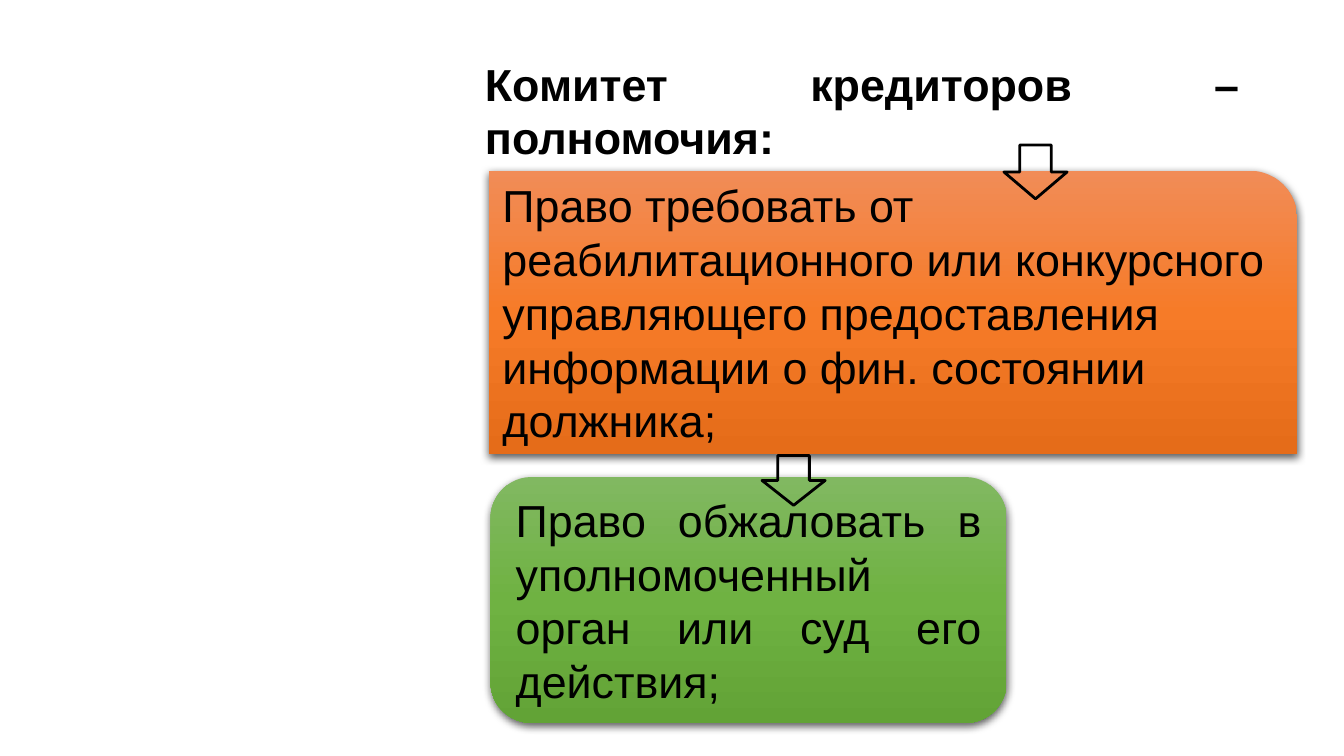
from copy import deepcopy
from dataclasses import dataclass

import lxml.etree
import pptx
import pptx.dml.color
import pptx.enum.shapes
import pptx.enum.text
import pptx.oxml.ns
import pptx.util

Inches = pptx.util.Inches
RGBColor = pptx.dml.color.RGBColor
Shapes = pptx.enum.shapes.MSO_SHAPE
Align = pptx.enum.text.PP_ALIGN
qn = pptx.oxml.ns.qn

BLACK = RGBColor(0x00, 0x00, 0x00)
ORANGES = (RGBColor(0xF1, 0x8C, 0x57), RGBColor(0xF6, 0x7B, 0x28), RGBColor(0xE5, 0x6C, 0x19))
GREENS = (RGBColor(0x81, 0xB8, 0x61), RGBColor(0x6F, 0xB2, 0x42), RGBColor(0x62, 0xA3, 0x36))


@dataclass(frozen=True)
class Area:
    left: float
    top: float
    width: float
    height: float

    def lengths(self) -> tuple:
        return tuple(Inches(n) for n in (self.left, self.top, self.width, self.height))


@dataclass(frozen=True)
class Power:
    kind: Shapes
    area: Area
    colors: tuple
    align: Align
    text: str


POWERS = (
    Power(Shapes.ROUND_1_RECTANGLE, Area(3.64, 1.27, 6.01, 2.11), ORANGES, Align.LEFT,
          "Право требовать от реабилитационного или конкурсного управляющего "
          "предоставления информации о фин. состоянии должника;"),
    Power(Shapes.ROUNDED_RECTANGLE, Area(3.65, 3.55, 3.84, 1.83), GREENS, Align.JUSTIFY,
          "Право обжаловать в уполномоченный орган или суд его действия;"),
)
ARROWS = (Area(7.47, 1.08, 0.47, 0.4), Area(5.67, 3.39, 0.47, 0.37))


def write(shape, text: str, align: Align, bold: bool = False) -> None:
    shape.text_frame.word_wrap = True
    para = shape.text_frame.paragraphs[0]
    para.alignment = align
    span = para.add_run()
    span.text = text
    span.font.name = "Arial"
    span.font.size = pptx.util.Pt(24)
    span.font.bold = bold
    span.font.color.rgb = BLACK


def fill_gradient(shape, colors: tuple) -> None:
    shape.fill.gradient()
    shape.fill.gradient_angle = 270
    first = next(shape._element.spPr.iter(qn("a:gs")))
    first.addnext(deepcopy(first))
    for stop, color, position in zip(shape.fill.gradient_stops, colors, (0, 0.5, 1)):
        stop.position = position
        stop.color.rgb = color


def add_shadow(shape) -> None:
    shape.shadow.inherit = False
    effects = shape._element.spPr.find(qn("a:effectLst"))
    outer = lxml.etree.SubElement(
        effects, qn("a:outerShdw"), blurRad=str(pptx.util.Pt(4.5)),
        dist=str(pptx.util.Pt(1.5)), dir="5400000", algn="ctr", rotWithShape="0")
    color = lxml.etree.SubElement(outer, qn("a:srgbClr"), val=str(BLACK))
    lxml.etree.SubElement(color, qn("a:alpha"), val="63000")


def add_power(page, power: Power) -> None:
    box = page.shapes.add_shape(power.kind, *power.area.lengths())
    fill_gradient(box, power.colors)
    box.line.fill.background()
    add_shadow(box)
    box.text_frame.vertical_anchor = pptx.enum.text.MSO_ANCHOR.MIDDLE
    write(box, power.text, power.align)


def add_arrow(page, area: Area) -> None:
    arrow = page.shapes.add_shape(Shapes.DOWN_ARROW, *area.lengths())
    arrow.shadow.inherit = False
    arrow.fill.background()
    arrow.line.color.rgb = BLACK
    arrow.line.width = pptx.util.Pt(1.5)


def main() -> None:
    # Widescreen page, 16 to 9
    deck = pptx.Presentation()
    deck.slide_width = Inches(10)
    deck.slide_height = deck.slide_width * 9 // 16
    page = deck.slides.add_slide(deck.slide_layouts[6])

    # Heading
    heading = page.shapes.add_textbox(*Area(3.51, 0.37, 5.81, 0.91).lengths())
    write(heading, "Комитет кредиторов – полномочия:", Align.JUSTIFY, bold=True)
    heading.text_frame.auto_size = pptx.enum.text.MSO_AUTO_SIZE.SHAPE_TO_FIT_TEXT

    # Powers of the committee
    for power in POWERS:
        add_power(page, power)

    # Arrows leading from part to part
    for area in ARROWS:
        add_arrow(page, area)

    deck.save("out.pptx")


if __name__ == "__main__":
    main()
